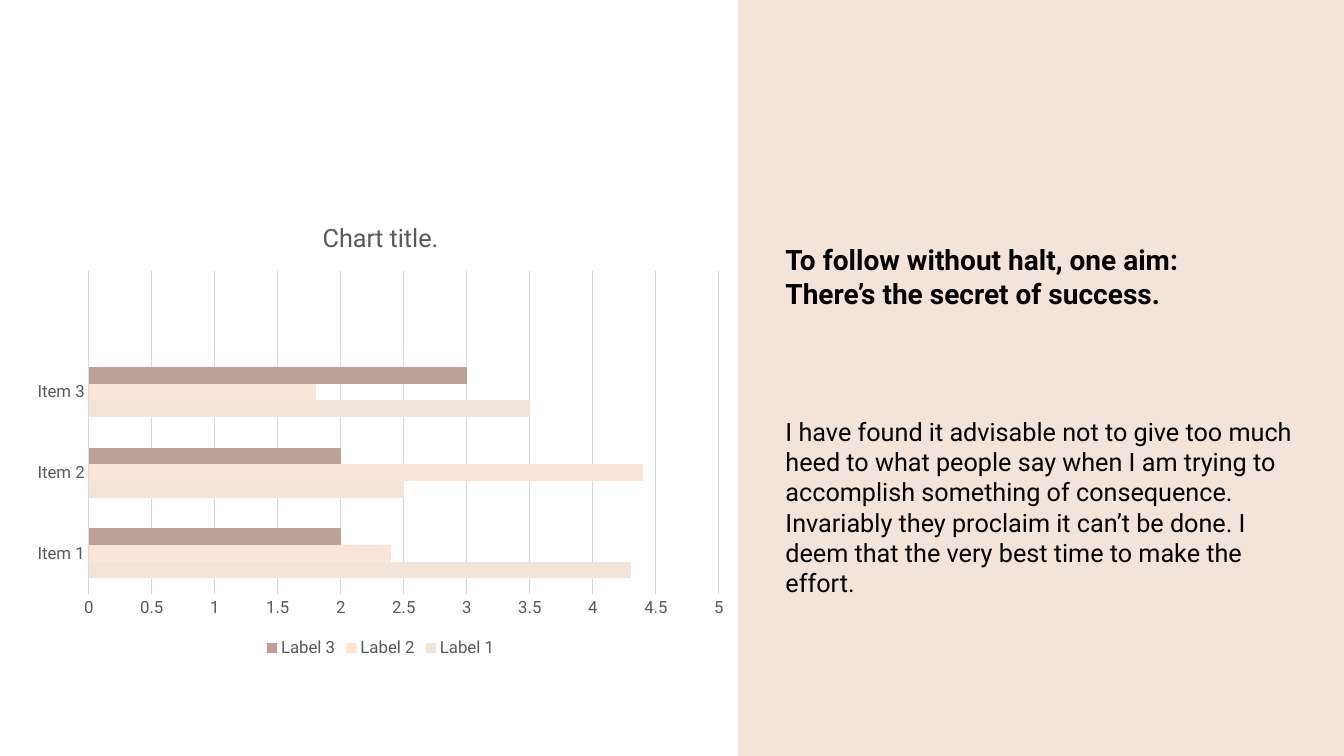
from dataclasses import dataclass

import pptx
import pptx.chart.data
import pptx.dml.color
import pptx.enum.chart
import pptx.enum.shapes
import pptx.enum.text
import pptx.oxml
import pptx.util
from pptx.util import Inches


@dataclass(frozen=True)
class Theme:
    font: str = "Roboto"
    panel: str = "F2E4D8"
    text: str = "000000"
    chart_text: str = "595959"
    grid: str = "D9D9D9"
    bars: tuple = ("F2E4D8", "FBE5D6", "BDA098")
    heading_size: int = 20
    body_size: int = 18
    chart_title_size: int = 18
    label_size: int = 12


theme = Theme()


def rgb(value):
    return pptx.dml.color.RGBColor.from_string(value)


def set_font(font, size, color, bold=False):
    font.name = theme.font
    font.size = pptx.util.Pt(size)
    font.bold = bold
    font.color.rgb = rgb(color)


deck = pptx.Presentation()
deck.slide_width = Inches(13.33)
deck.slide_height = Inches(7.5)
page = deck.slides.add_slide(deck.slide_layouts[1])

# Panel, placed behind the placeholders
panel = page.shapes.add_shape(
    pptx.enum.shapes.MSO_SHAPE.RECTANGLE,
    Inches(7.32), 0, Inches(6.01), Inches(7.5))
panel.shadow.inherit = False
panel.fill.solid()
panel.fill.fore_color.rgb = rgb(theme.panel)
panel.line.fill.background()
page.shapes._spTree.insert(2, panel._element)

# Heading and body text
heading, body = page.shapes.title, page.placeholders[1]
texts = (
    (heading, (7.69, 2.36, 4.11, 0.77), theme.heading_size, True,
     "To follow without halt, one aim: There’s the secret of success."),
    (body, (7.69, 4.08, 5.42, 1.62), theme.body_size, False,
     "I have found it advisable not to give too much heed to what people say "
     "when I am trying to accomplish something of consequence. Invariably they "
     "proclaim it can’t be done. I deem that the very best time to make the effort."),
)
for box, place, size, bold, words in texts:
    box.left, box.top, box.width, box.height = map(Inches, place)
    frame = box.text_frame
    frame.text = words
    frame.word_wrap = True
    frame.auto_size = pptx.enum.text.MSO_AUTO_SIZE.SHAPE_TO_FIT_TEXT
    frame.vertical_anchor = pptx.enum.text.MSO_ANCHOR.TOP
    para = frame.paragraphs[0]
    properties = para._p.get_or_add_pPr()
    properties.set("marL", "0")
    properties.set("indent", "0")
    properties.append(pptx.oxml.parse_xml(
        '<a:buNone xmlns:a="http://schemas.openxmlformats.org/drawingml/2006/main"/>'))
    para.alignment = pptx.enum.text.PP_ALIGN.LEFT
    para.space_before = pptx.util.Pt(0)
    set_font(para.font, size, theme.text, bold)

# Bar chart; the fourth category is empty
chart_data = pptx.chart.data.CategoryChartData()
chart_data.categories = ["Item 1", "Item 2", "Item 3", ""]
chart_data.add_series("Label 1", (4.3, 2.5, 3.5, None))
chart_data.add_series("Label 2", (2.4, 4.4, 1.8, None))
chart_data.add_series("Label 3", (2, 2, 3, None))
chart = page.shapes.add_chart(
    pptx.enum.chart.XL_CHART_TYPE.BAR_CLUSTERED,
    Inches(0.23), Inches(2.01), Inches(7.09), Inches(4.56), chart_data).chart
set_font(chart.font, theme.label_size, theme.chart_text)

chart.has_title = True
chart.chart_title.text_frame.text = "Chart title."
set_font(chart.chart_title.text_frame.paragraphs[0].font,
         theme.chart_title_size, theme.chart_text)

chart.has_legend = True
chart.legend.position = pptx.enum.chart.XL_LEGEND_POSITION.BOTTOM
chart.legend.include_in_layout = False
set_font(chart.legend.font, theme.label_size, theme.chart_text)

plot = chart.plots[0]
plot.vary_by_categories = False
plot.gap_width = 182
plot.overlap = 0
for series, color in zip(plot.series, theme.bars):
    series.format.fill.solid()
    series.format.fill.fore_color.rgb = rgb(color)

for axis in (chart.category_axis, chart.value_axis):
    axis.major_tick_mark = pptx.enum.chart.XL_TICK_MARK.NONE
    axis.minor_tick_mark = pptx.enum.chart.XL_TICK_MARK.NONE
    set_font(axis.tick_labels.font, theme.label_size, theme.chart_text)
chart.value_axis.minimum_scale = 0
chart.value_axis.maximum_scale = 5
chart.value_axis.major_unit = 0.5
chart.value_axis.has_major_gridlines = True
chart.value_axis.format.line.fill.background()
for line in (chart.category_axis.format.line,
             chart.value_axis.major_gridlines.format.line):
    line.color.rgb = rgb(theme.grid)
    line.width = pptx.util.Pt(0.75)

deck.save("out.pptx")
